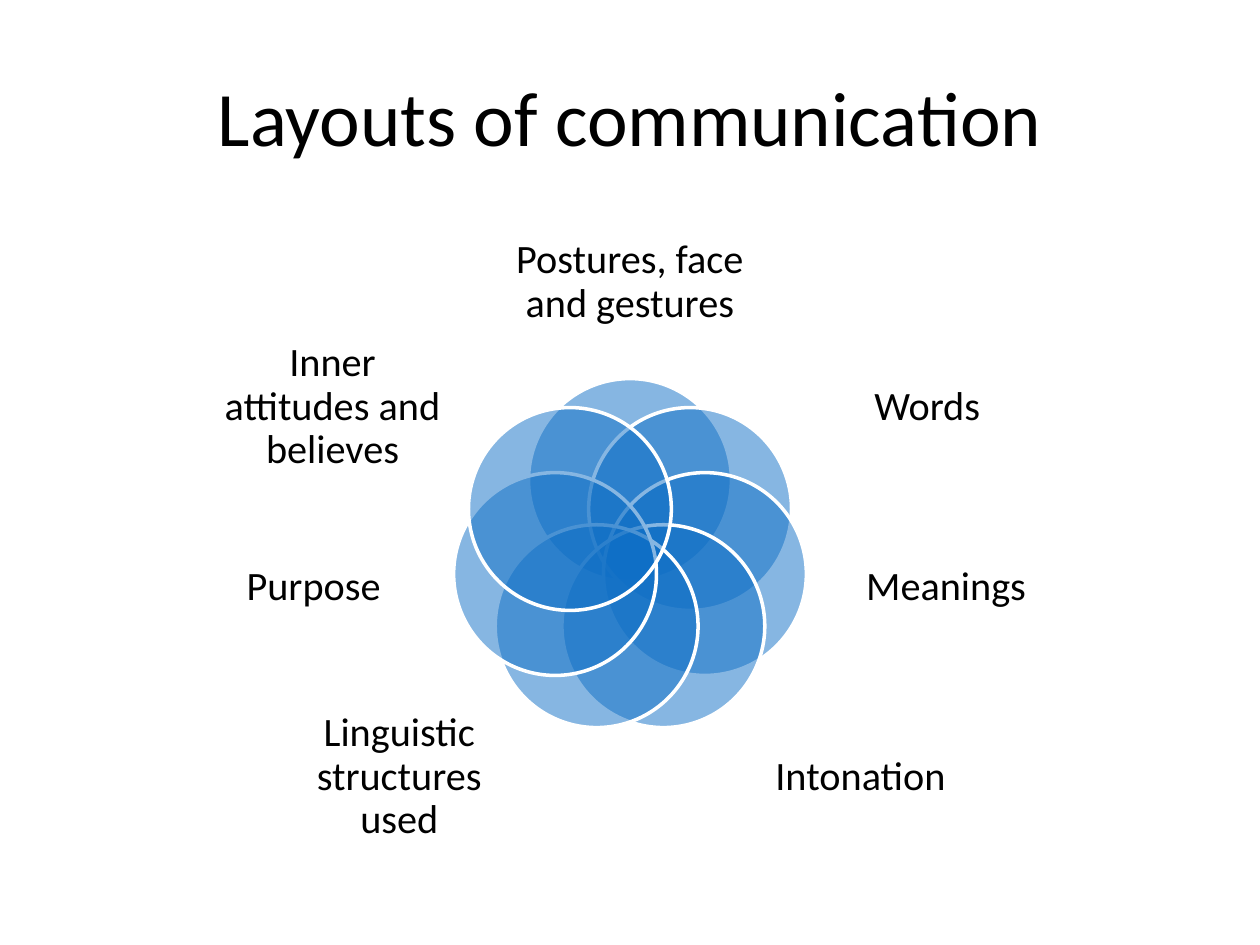
import math

from lxml import etree
from pptx import Presentation
from pptx import util as u
from pptx.dml.color import RGBColor
from pptx.enum import shapes, text
from pptx.oxml.ns import qn

COLORS = {"petal": "0F6FC6", "outline": "FFFFFF", "text": "000000"}
FONT = "Calibri"
CENTER_X, CENTER_Y = 5, 4.42
RING_RADIUS, PETAL_SIZE = 0.61, 1.61

# Clockwise from the top: wording, label centre (x, y), label size
LABELS = [
    ("Postures, face and gestures", 5, 2.24, 1.85, 0.99),
    ("Words", 7.36, 3.23, 1.75, 1.09),
    ("Meanings", 7.51, 4.66, 1.72, 1.16),
    ("Intonation", 6.83, 6.17, 1.85, 1.06),
    ("Linguistic structures used", 3.17, 6.17, 1.85, 1.06),
    ("Purpose", 2.49, 4.66, 1.72, 1.16),
    ("Inner attitudes and believes", 2.64, 3.23, 1.75, 1.09),
]


def color(name):
    return RGBColor.from_string(COLORS[name])


def centered(x, y, width, height):
    return [u.Inches(v) for v in (x - width / 2, y - height / 2, width, height)]


def add_text(page, wording, x, y, width, height, size, spacing=1.0, inset=0.0):
    box = page.shapes.add_textbox(*centered(x, y, width, height))
    frame = box.text_frame
    frame.word_wrap = True
    frame.vertical_anchor = text.MSO_ANCHOR.MIDDLE
    frame.margin_left = frame.margin_right = u.Inches(inset)
    frame.margin_top = frame.margin_bottom = u.Inches(inset / 2)
    frame.text = wording
    para = frame.paragraphs[0]
    para.alignment = text.PP_ALIGN.CENTER
    para.line_spacing = spacing
    font = para.runs[0].font
    font.name = FONT
    font.size = u.Pt(size)
    font.color.rgb = color("text")


def add_petal(page, angle):
    x = CENTER_X + RING_RADIUS * math.sin(angle)
    y = CENTER_Y - RING_RADIUS * math.cos(angle)
    petal = page.shapes.add_shape(
        shapes.MSO_SHAPE.OVAL, *centered(x, y, PETAL_SIZE, PETAL_SIZE))
    petal.shadow.inherit = False
    petal.fill.solid()
    petal.fill.fore_color.rgb = color("petal")
    petal.line.color.rgb = color("outline")
    petal.line.width = u.Pt(2)
    # Half-transparent fill
    fill = petal.fill._xPr.find(qn("a:solidFill"))
    etree.SubElement(fill[0], qn("a:alpha"), val="50000")


def main():
    deck = Presentation()
    deck.slide_width, deck.slide_height = u.Inches(10), u.Inches(7.5)
    page = deck.slides.add_slide(deck.slide_layouts[6])

    # Title
    add_text(page, "Layouts of communication", 5, 0.92, 9, 1.25, 44, inset=0.1)

    # Ring of overlapping circles with their labels
    for index, (wording, *place) in enumerate(LABELS):
        add_petal(page, index * math.tau / len(LABELS))
        add_text(page, wording, *place, size=23, spacing=0.9)

    deck.save("out.pptx")


if __name__ == "__main__":
    main()
